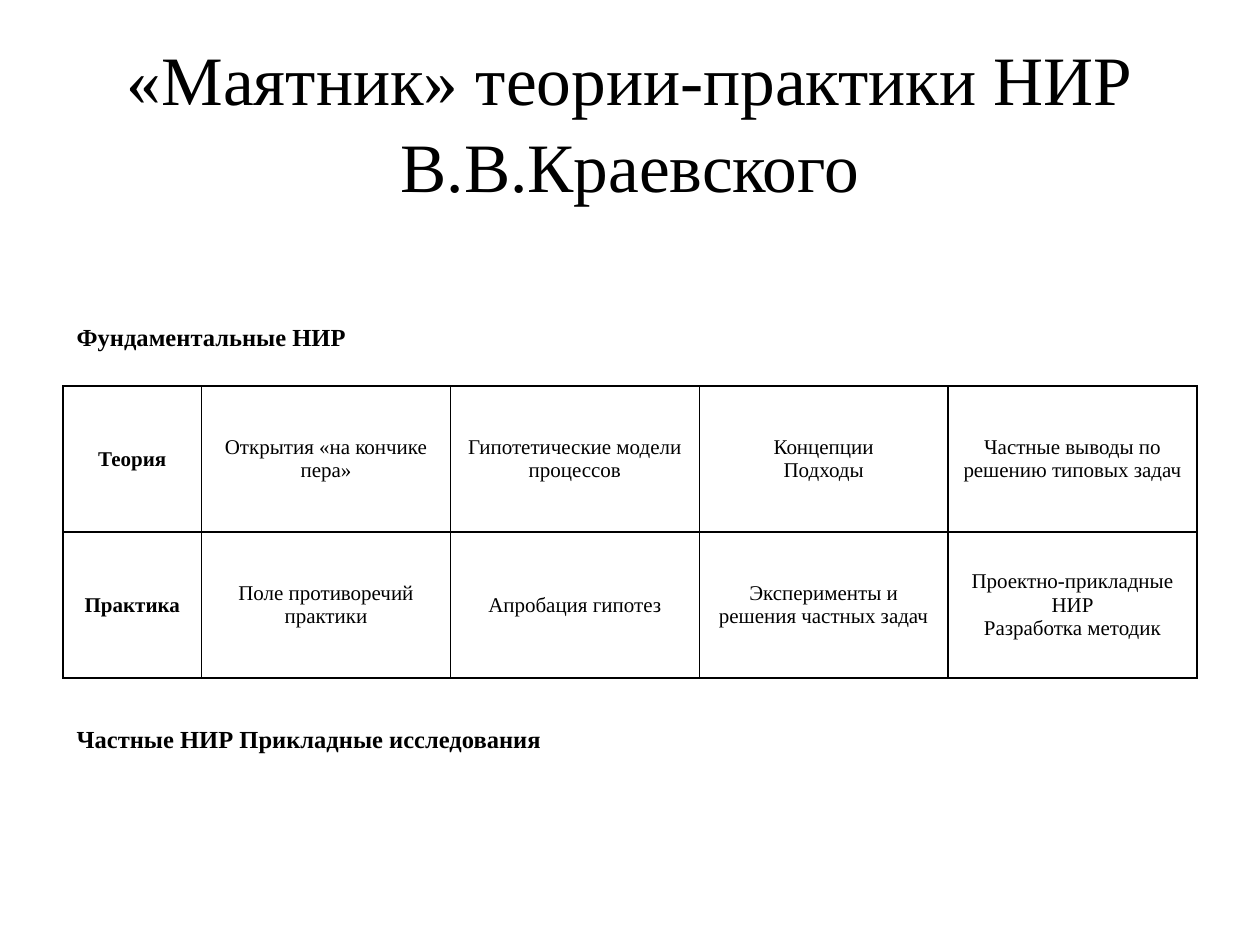
import lxml.etree
import pptx
import pptx.dml.color
import pptx.enum.text
import pptx.oxml.ns
import pptx.util

Pt = pptx.util.Pt
BLACK = pptx.dml.color.RGBColor(0, 0, 0)
WHITE = pptx.dml.color.RGBColor(255, 255, 255)
FONT = "Times New Roman"
CENTER = pptx.enum.text.PP_ALIGN.CENTER
LEFT = pptx.enum.text.PP_ALIGN.LEFT
MIDDLE = pptx.enum.text.MSO_ANCHOR.MIDDLE
TABLE_WIDTH = 648
HEADING_WIDTH = 79.2
ROW_HEIGHT = 83.5
ROWS = [
    ["Теория", "Открытия «на кончике пера»", "Гипотетические модели процессов",
     "Концепции\nПодходы", "Частные выводы по решению типовых задач"],
    ["Практика", "Поле противоречий практики", "Апробация гипотез",
     "Эксперименты и решения частных задач",
     "Проектно-прикладные НИР\nРазработка методик"],
]


def format_text(frame, size, bold=False, align=CENTER):
    for para in frame.paragraphs:
        para.alignment = align
        for span in para.runs:
            span.font.name = FONT
            span.font.size = Pt(size)
            span.font.bold = bold
            span.font.color.rgb = BLACK


def add_text(page, text, left, top, width, height, wrap=True):
    box = page.shapes.add_textbox(Pt(left), Pt(top), Pt(width), Pt(height))
    frame = box.text_frame
    frame.word_wrap = wrap
    frame.vertical_anchor = MIDDLE
    frame.text = text
    return frame


def add_title(page):
    frame = add_text(page, "«Маятник» теории-практики НИР В.В.Краевского",
                     36, 21.6, 648, 90)
    frame.margin_top = Pt(7.2)
    frame.paragraphs[0].line_spacing = 1.04
    format_text(frame, 39.6)


def add_research_labels(page):
    frame = add_text(page, "Фундаментальные НИР\nЧастные НИР Прикладные исследования",
                     36.7, 179.3, 282.2, 255.6, wrap=False)
    frame.paragraphs[1].space_before = Pt(213)
    format_text(frame, 14, bold=True, align=LEFT)


def add_borders(cell):
    properties = cell._tc.get_or_add_tcPr()
    qn = pptx.oxml.ns.qn
    for side in ("a:lnL", "a:lnR", "a:lnT", "a:lnB"):
        line = lxml.etree.SubElement(properties, qn(side), w=str(Pt(1)))
        fill = lxml.etree.SubElement(line, qn("a:solidFill"))
        lxml.etree.SubElement(fill, qn("a:srgbClr"), val=str(BLACK))


def add_theory_practice_table(page):
    column_count = len(ROWS[0])
    table = page.shapes.add_table(len(ROWS), column_count, Pt(36), Pt(220.5),
                                  Pt(TABLE_WIDTH), Pt(ROW_HEIGHT * len(ROWS))).table
    table.first_row = False
    table.horz_banding = False
    for index, column in enumerate(table.columns):
        body_width = (TABLE_WIDTH - HEADING_WIDTH) / (column_count - 1)
        column.width = Pt(body_width if index else HEADING_WIDTH)
    for row_index, texts in enumerate(ROWS):
        table.rows[row_index].height = Pt(ROW_HEIGHT)
        for column_index, text in enumerate(texts):
            cell = table.cell(row_index, column_index)
            cell.margin_left = cell.margin_right = Pt(6.5)
            cell.margin_top = cell.margin_bottom = Pt(3)
            cell.vertical_anchor = MIDDLE
            cell.text_frame.text = text
            format_text(cell.text_frame, 12, bold=column_index == 0)
            add_borders(cell)
            cell.fill.solid()
            cell.fill.fore_color.rgb = WHITE


def main():
    deck = pptx.Presentation()
    deck.slide_width = Pt(720)
    deck.slide_height = Pt(540)
    page = deck.slides.add_slide(deck.slide_layouts[6])
    add_title(page)
    add_theory_practice_table(page)
    add_research_labels(page)
    deck.save("out.pptx")


if __name__ == "__main__":
    main()
